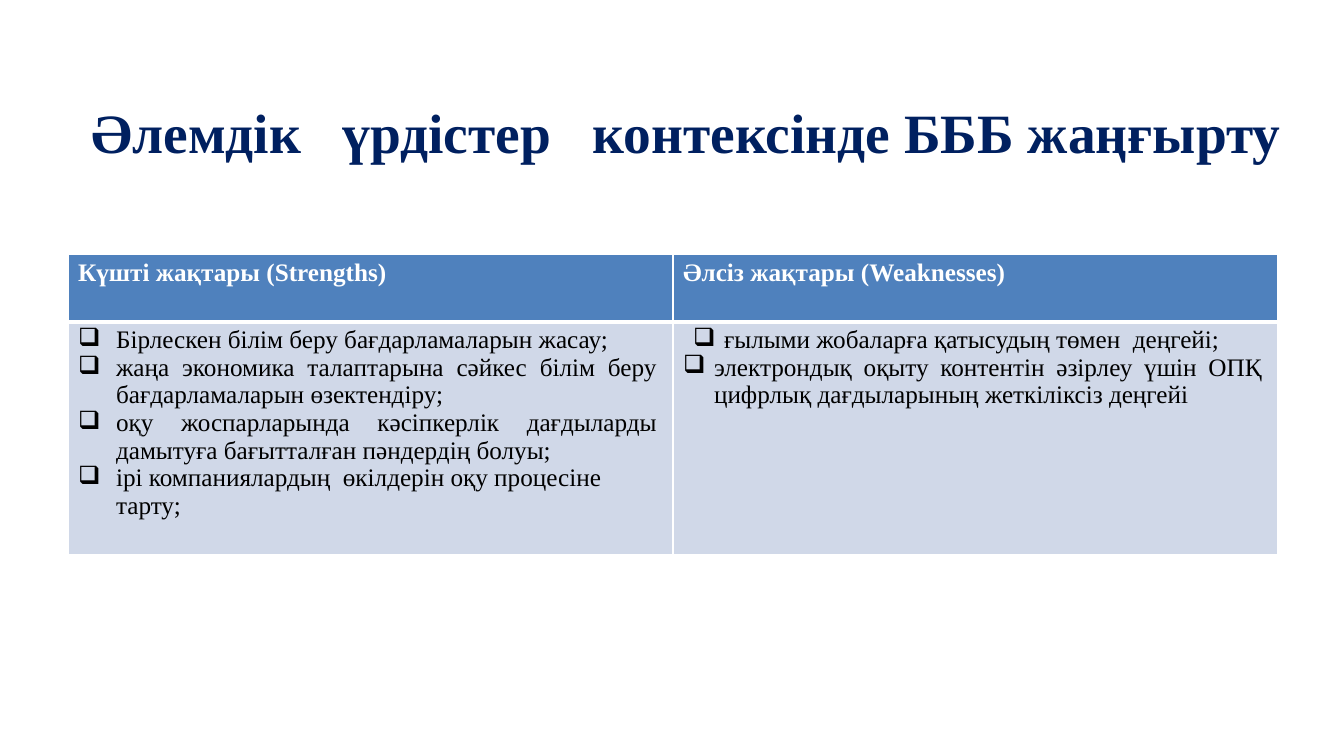
import dataclasses
import typing

import lxml.etree
import pptx
import pptx.dml.color
import pptx.enum.text
import pptx.oxml.ns
import pptx.util

EMU_PER_PX = 914400 / 100.8
SERIF = "Times New Roman"
WHITE = "FFFFFF"
JUSTIFY = pptx.enum.text.PP_ALIGN.JUSTIFY
LEFT = pptx.enum.text.PP_ALIGN.LEFT
TITLE_FORMAT = {"name": SERIF, "size": pptx.util.Pt(39.6), "bold": True}
HEADER_FORMAT = {"name": SERIF, "size": pptx.util.Pt(18), "bold": True}
BODY_FORMAT = {**HEADER_FORMAT, "bold": False}


@dataclasses.dataclass(frozen=True)
class Bullet:
    text: str
    margin: int
    hanging: int
    tab: typing.Optional[int] = None
    alignment: pptx.enum.text.PP_ALIGN = JUSTIFY
    space_before: float = 0


@dataclasses.dataclass(frozen=True)
class Column:
    header: str
    bullets: tuple[Bullet, ...]


COLUMNS = (
    Column("Күшті жақтары (Strengths)", (
        Bullet("Бірлескен білім беру бағдарламаларын жасау;", 38, 38, 29),
        Bullet("жаңа экономика талаптарына сәйкес білім беру бағдарламаларын өзектендіру;",
               38, 38, 29, space_before=0.3),
        Bullet("оқу жоспарларында кәсіпкерлік дағдыларды дамытуға бағытталған пәндердің болуы;",
               38, 38, 29, space_before=0.4),
        Bullet("ірі компаниялардың  өкілдерін оқу процесіне тарту;",
               38, 38, 29, LEFT, 0.1),
    )),
    Column("Әлсіз жақтары (Weaknesses)", (
        Bullet("ғылыми жобаларға қатысудың төмен  деңгейі;", 41, 31),
        Bullet("электрондық оқыту контентін әзірлеу үшін ОПҚ цифрлық дағдыларының жеткіліксіз деңгейі",
               31, 31, 24, space_before=0.1),
    )),
)


def px(length: int) -> pptx.util.Emu:
    return pptx.util.Emu(round(length * EMU_PER_PX))


def color(value: str) -> pptx.dml.color.RGBColor:
    return pptx.dml.color.RGBColor.from_string(value)


def add_element(parent: typing.Any, tag: str, **attributes: str) -> typing.Any:
    element = lxml.etree.SubElement(parent, pptx.oxml.ns.qn(tag))
    for name, value in attributes.items():
        element.set(name, value)
    return element


def format_font(paragraph: typing.Any, values: dict[str, typing.Any], ink: str) -> None:
    for run in paragraph.runs:
        for name, value in values.items():
            setattr(run.font, name, value)
        run.font.color.rgb = color(ink)


def format_cell(cell: typing.Any, fill: str, top: int, bottom: int) -> None:
    cell.margin_right = px(16)
    properties = cell._tc.get_or_add_tcPr()
    for side, width in {"L": 1, "R": 1, "T": top, "B": bottom}.items():
        line = add_element(properties, f"a:ln{side}", w=str(pptx.util.Pt(width)))
        add_element(add_element(line, "a:solidFill"), "a:srgbClr", val=WHITE)
    cell.fill.solid()
    cell.fill.fore_color.rgb = color(fill)


def write_bullet(paragraph: typing.Any, bullet: Bullet) -> None:
    properties = paragraph._p.get_or_add_pPr()
    properties.set("marL", str(px(bullet.margin)))
    properties.set("indent", str(-px(bullet.hanging)))
    add_element(properties, "a:buChar", char="❑")
    if bullet.tab is not None:
        tabs = add_element(properties, "a:tabLst")
        add_element(tabs, "a:tab", pos=str(px(bullet.tab)), algn="l")
    paragraph.alignment = bullet.alignment
    paragraph.line_spacing = 0.98
    paragraph.space_before = pptx.util.Pt(bullet.space_before)
    paragraph.add_run().text = bullet.text
    format_font(paragraph, BODY_FORMAT, "000000")


def write_title(title: typing.Any) -> None:
    title.left, title.top, title.width, title.height = map(px, (67, 92, 1239, 70))
    frame = title.text_frame
    frame.text = "Әлемдік   үрдістер   контексінде БББ жаңғырту"
    frame_format = {
        "word_wrap": True,
        "auto_size": pptx.enum.text.MSO_AUTO_SIZE.NONE,
        "vertical_anchor": pptx.enum.text.MSO_ANCHOR.MIDDLE,
        "margin_top": px(8),
        "margin_bottom": px(0),
    }
    for name, value in frame_format.items():
        setattr(frame, name, value)
    paragraph = frame.paragraphs[0]
    paragraph.alignment = pptx.enum.text.PP_ALIGN.CENTER
    format_font(paragraph, TITLE_FORMAT, "002060")


def add_analysis_table(slide: typing.Any) -> None:
    table = slide.shapes.add_table(
        2, len(COLUMNS), px(68), px(254), px(1210), px(301)).table
    for row, height in zip(table.rows, (68, 233)):
        row.height = px(height)
    for index, column in enumerate(COLUMNS):
        header, body = table.cell(0, index), table.cell(1, index)
        format_cell(header, "4F81BD", 1, 3)
        format_cell(body, "D0D8E8", 3, 1)
        header.text = column.header
        format_font(header.text_frame.paragraphs[0], HEADER_FORMAT, WHITE)
        for position, bullet in enumerate(column.bullets):
            frame = body.text_frame
            paragraph = frame.add_paragraph() if position else frame.paragraphs[0]
            write_bullet(paragraph, bullet)


def main() -> None:
    presentation = pptx.Presentation()
    presentation.slide_width = px(1344)
    presentation.slide_height = px(756)
    slide = presentation.slides.add_slide(presentation.slide_layouts.get_by_name("Title Only"))
    add_analysis_table(slide)
    write_title(slide.shapes.title)
    presentation.save("out.pptx")


if __name__ == "__main__":
    main()
